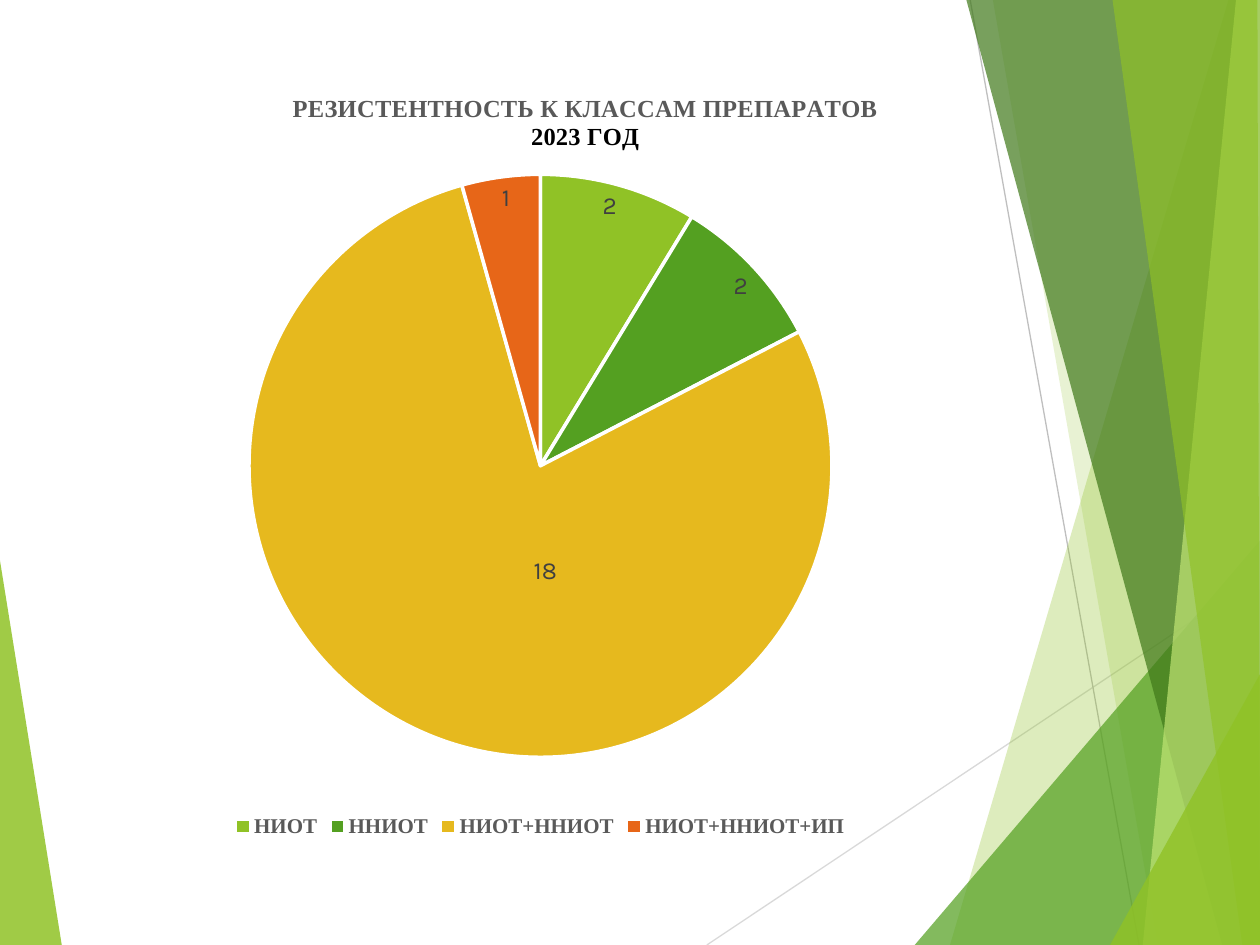
"""Build a slide with a pie chart of drug class resistance beside green facets."""
import pptx
import pptx.chart.data
import pptx.dml.color
import pptx.enum.chart
import pptx.enum.shapes
import pptx.oxml
import pptx.oxml.ns
import pptx.util

W, H = 10, 7.5
COLORS = {
    "lime": "90C226", "green": "54A021", "gold": "E6B91E", "orange": "E76618",
    "forest": "3F7819", "pale": "C0E474", "white": "FFFFFF", "black": "000000",
    "title": "595959", "label": "404040", "light": "D9D9D9", "silver": "BFBFBF",
}
SERIF, SANS = "Times New Roman", "Karla"
TITLE = [("РЕЗИСТЕНТНОСТЬ К КЛАССАМ ПРЕПАРАТОВ", "title"), ("2023 ГОД", "black")]
SLICES = [
    ("НИОТ", 2, "lime"),
    ("ННИОТ", 2, "green"),
    ("НИОТ+ННИОТ", 18, "gold"),
    ("НИОТ+ННИОТ+ИП", 1, "orange"),
]
CHART_BOX = (0.45, 0.52, 7.68, 6.17)
LEFT_FACET = ([(0, 4.45), (0.49, H), (0, H)], "lime", 85)
LINES = [((5.61, H), (W, 4.57), "light"), ((7.7, 0), (9.04, H), "silver")]
RIGHT_FACETS = [
    ([(9.75, 0), (7.54, H), (W, H), (W, 0)], "lime", 30),
    ([(7.88, 0), (9.19, H), (W, H), (W, 0)], "lime", 20),
    ([(7.26, H), (W, 4.29), (W, H)], "green", 72),
    ([(7.67, 0), (9.7, H), (W, H), (W, 0)], "forest", 70),
    ([(9.81, 0), (9.07, H), (W, H), (W, 0)], "pale", 70),
    ([(8.83, 0), (9.86, H), (W, H), (9.98, 0)], "lime", 65),
    ([(8.81, H), (W, 5.35), (W, H)], "lime", 80),
]


def rgb(name):
    return pptx.dml.color.RGBColor.from_string(COLORS[name])


def format_font(font, size, color, name, bold=False):
    font.size, font.bold, font.name = pptx.util.Pt(size), bold, name
    font.color.rgb = rgb(color)


def add_text(p, text, **fmt):
    r = p.add_run()
    r.text = text
    format_font(r.font, **fmt)


def add_facet(s, points, color, opacity):
    corners = [(pptx.util.Inches(x), pptx.util.Inches(y)) for x, y in points]
    builder = s.shapes.build_freeform(*corners[0])
    builder.add_line_segments(corners[1:], close=True)
    sp = builder.convert_to_shape()
    sp.shadow.inherit = False
    sp.line.fill.background()
    sp.fill.solid()
    sp.fill.fore_color.rgb = rgb(color)
    clr = sp.fill._xPr.find(".//" + pptx.oxml.ns.qn("a:srgbClr"))
    alpha = clr.makeelement(pptx.oxml.ns.qn("a:alpha"), {"val": str(opacity * 1000)})
    clr.append(alpha)


def add_line(s, start, end, color):
    ends = [pptx.util.Inches(v) for v in start + end]
    line = s.shapes.add_connector(pptx.enum.shapes.MSO_CONNECTOR.STRAIGHT, *ends)
    line.line.color.rgb = rgb(color)
    line.line.width = pptx.util.Pt(0.75)
    sp_pr = line._element.spPr
    sp_pr.append(sp_pr.makeelement(pptx.oxml.ns.qn("a:effectLst"), {}))


def set_layout(parent, before, **values):
    """Place a chart part by shares of the chart's size."""
    for old in parent.findall(pptx.oxml.ns.qn("c:layout")):
        parent.remove(old)
    items = "".join(f'<c:{k} val="{v}"/>' for k, v in values.items())
    layout = pptx.oxml.parse_xml(
        f'<c:layout {pptx.oxml.ns.nsdecls("c")}>'
        f"<c:manualLayout>{items}</c:manualLayout></c:layout>")
    parent.insert(before, layout)


def add_pie(s):
    data = pptx.chart.data.CategoryChartData()
    data.categories = [name for name, _, _ in SLICES]
    data.add_series("Series 1", [value for _, value, _ in SLICES])
    chart = s.shapes.add_chart(
        pptx.enum.chart.XL_CHART_TYPE.PIE,
        *[pptx.util.Inches(v) for v in CHART_BOX], data).chart
    format_font(chart.font, 10, "black", SANS)

    tf = chart.chart_title.text_frame
    for i, (text, color) in enumerate(TITLE):
        p = tf.add_paragraph() if i else tf.paragraphs[0]
        add_text(p, text, size=14, color=color, name=SERIF, bold=True)
    chart.chart_title.include_in_layout = False
    set_layout(chart.chart_title._element, 1,
               xMode="edge", yMode="edge", x=0.24, y=0.03)

    chart.has_legend = True
    chart.legend.position = pptx.enum.chart.XL_LEGEND_POSITION.BOTTOM
    chart.legend.include_in_layout = False
    format_font(chart.legend.font, 12, "title", SERIF, bold=True)

    plot = chart.plots[0]
    plot.vary_by_categories = True
    set_layout(chart._chartSpace.chart.plotArea, 0, layoutTarget="inner",
               xMode="edge", yMode="edge", x=0.19, y=0.14, w=0.62, h=0.75)
    series = plot.series[0]
    for i, (_, _, color) in enumerate(SLICES):
        fmt = series.points[i].format
        fmt.fill.solid()
        fmt.fill.fore_color.rgb = rgb(color)
        fmt.line.color.rgb = rgb("white")
        fmt.line.width = pptx.util.Pt(2)

    inside = pptx.enum.chart.XL_LABEL_POSITION.INSIDE_END
    labels = series.data_labels
    labels.show_value = True
    labels.position = inside
    format_font(labels.font, 14, "label", SANS)
    largest = max(range(len(SLICES)), key=lambda i: SLICES[i][1])
    label = series.points[largest].data_label
    format_font(label.font, 14, "label", SANS)
    label.position = inside
    set_layout(label._dLbl, 1, x=0.11, y=-0.18)


def main():
    prs = pptx.Presentation()
    prs.slide_width, prs.slide_height = pptx.util.Inches(W), pptx.util.Inches(H)
    s = prs.slides.add_slide(prs.slide_layouts[6])
    add_facet(s, *LEFT_FACET)
    for line in LINES:
        add_line(s, *line)
    for facet in RIGHT_FACETS:
        add_facet(s, *facet)
    add_pie(s)
    prs.save("out.pptx")


if __name__ == "__main__":
    main()
